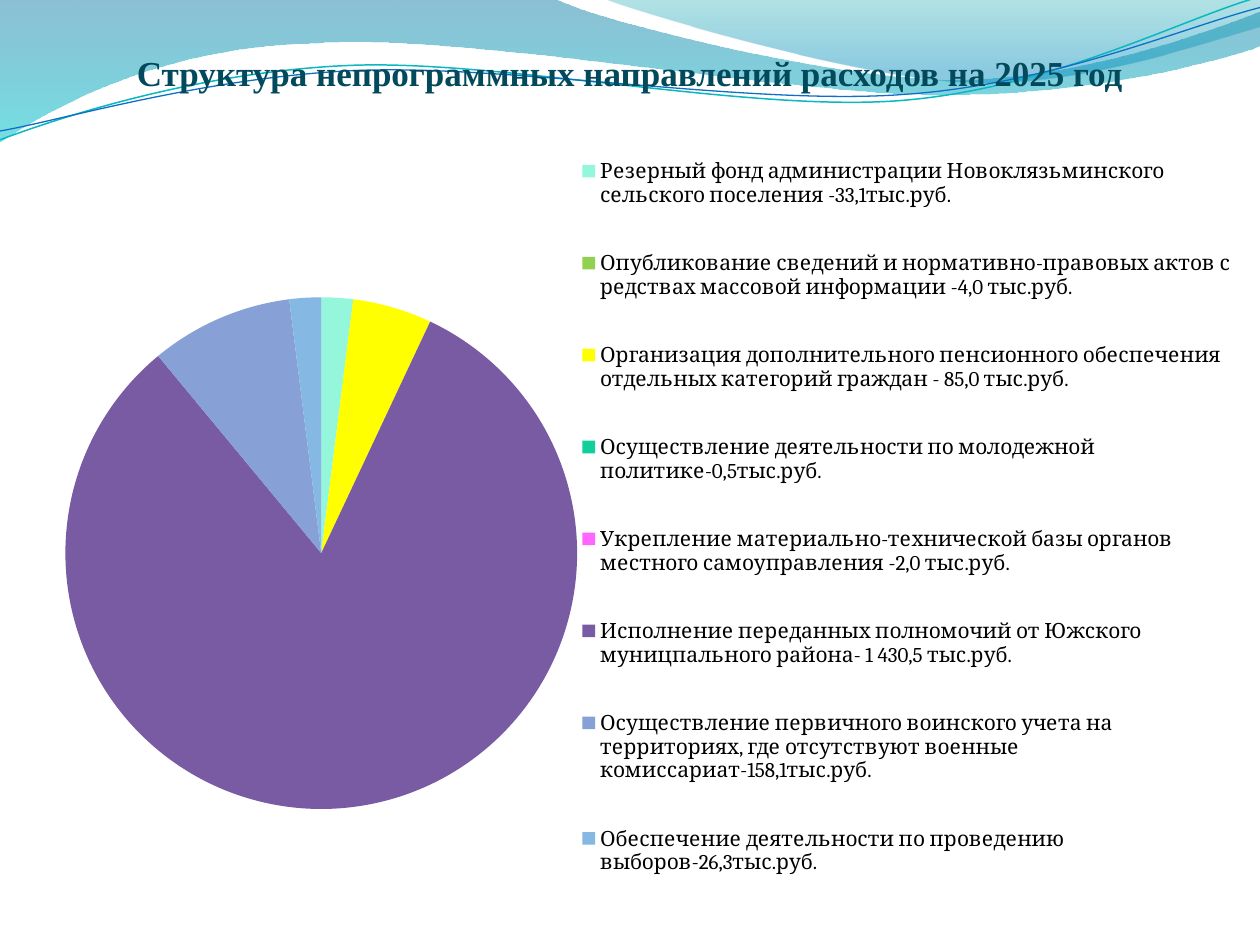
from lxml import etree
from pptx import Presentation
from pptx.chart.data import CategoryChartData
from pptx.dml.color import RGBColor
from pptx.enum.chart import XL_CHART_TYPE, XL_LEGEND_POSITION
from pptx.enum.text import PP_ALIGN
from pptx.oxml import parse_xml
from pptx.oxml.ns import nsdecls, qn
from pptx.util import Inches, Pt

PIE = XL_CHART_TYPE.PIE
LEGEND_RIGHT = XL_LEGEND_POSITION.RIGHT
CENTER = PP_ALIGN.CENTER

BLACK = RGBColor(0x00, 0x00, 0x00)
TITLE_TEAL = RGBColor(0x03, 0x49, 0x5C)

# Each wave: start point, then line ends (2 numbers) or Bezier curves (6 numbers).
# Gradient stops: position, colour, opacity in percent.
BANDS = [
    ([(0, 0), (4.4, -0.01), (4.76, 0.17, 6.64, 0.63, 7.58, 0.63),
      (8.53, 0.63, 9.58, 0.26, 10, 0.09), (10.01, 0.36),
      (9.83, 0.44, 8.7, 0.76, 7.46, 0.75), (6.22, 0.75, 3.82, 0.28, 2.57, 0.34),
      (1.29, 0.36, 0.46, 0.83, -0.01, 1.13), (0, 0)],
     [(0, RGBColor(0x00, 0x74, 0xA1), 45), (1, RGBColor(0x00, 0xC6, 0xCF), 55)]),
    ([(4.79, -0.01), (5.09, 0.11, 6.82, 0.62, 7.69, 0.65),
      (8.56, 0.69, 9.61, 0.32, 10, 0.21), (10, 0), (4.79, -0.01)],
     [(0, RGBColor(0x00, 0xA1, 0xA9), 30), (0.8, RGBColor(0x00, 0x8B, 0xBF), 45)]),
]
STRANDS = [
    ([(0, 1.11), (0.48, 0.93, 1.58, 0.57, 2.77, 0.52),
      (3.95, 0.47, 5.93, 0.89, 7.13, 0.8), (8.33, 0.71, 9.38, 0.15, 9.98, -0.02)],
     RGBColor(0x0A, 0xB8, 0xBF), 0.85),
    ([(0, 1.04), (0.47, 0.96, 1.64, 0.61, 2.83, 0.56),
      (4.03, 0.51, 5.97, 0.84, 7.17, 0.75), (8.36, 0.67, 9.41, 0.21, 10, 0.06)],
     RGBColor(0x0F, 0x6F, 0xC6), 0.75),
]

# Category, share of spending in percent, slice colour
EXPENSES = [
    ("Резерный фонд администрации Новоклязьминского сельского поселения -33,1тыс.руб.",
     2, RGBColor(0x94, 0xF7, 0xDC)),
    ("Опубликование сведений и нормативно-правовых актов с редствах массовой информации -4,0 тыс.руб.",
     0, RGBColor(0x92, 0xD0, 0x50)),
    ("Организация дополнительного пенсионного обеспечения отдельных категорий граждан - 85,0 тыс.руб.",
     5, RGBColor(0xFF, 0xFF, 0x00)),
    ("Осуществление деятельности по молодежной политике-0,5тыс.руб.",
     0, RGBColor(0x10, 0xCF, 0x9B)),
    ("Укрепление материально-технической базы органов местного самоуправления -2,0 тыс.руб.",
     0, RGBColor(0xFF, 0x66, 0xFF)),
    ("Исполнение переданных полномочий от Южского муницпального района- 1 430,5 тыс.руб.",
     82, RGBColor(0x78, 0x5B, 0xA3)),
    ("Осуществление первичного воинского учета на территориях, где отсутствуют военные комиссариат-158,1тыс.руб.",
     9, RGBColor(0x87, 0xA0, 0xD6)),
    ("Обеспечение деятельности по проведению выборов-26,3тыс.руб.",
     2, RGBColor(0x85, 0xB8, 0xE2)),
]


def add_wave(shapes, segments, close):
    """Draw a wave in inches, turning each run of three curve points into a Bezier."""
    points = [(Inches(x), Inches(y)) for segment in segments
              for x, y in zip(segment[::2], segment[1::2])]
    builder = shapes.build_freeform(*points[0])
    builder.add_line_segments(points[1:], close=close)
    wave = builder.convert_to_shape()
    wave.shadow.inherit = False
    lines = iter(list(wave._element.spPr.iter(qn("a:lnTo"))))
    for segment in segments[1:]:
        first = next(lines)
        if len(segment) == 6:
            curve = etree.Element(qn("a:cubicBezTo"))
            first.addprevious(curve)
            for line in (first, next(lines), next(lines)):
                curve.append(line[0])
                line.getparent().remove(line)
    return wave


def manual_layout(x, y, width, height, inner=False):
    """Return a chart layout element from percentages of the chart area."""
    target = '<c:layoutTarget val="inner"/>' if inner else ""
    return parse_xml(
        f'<c:layout {nsdecls("c")}><c:manualLayout>{target}'
        '<c:xMode val="edge"/><c:yMode val="edge"/>'
        f'<c:x val="{x / 100}"/><c:y val="{y / 100}"/>'
        f'<c:w val="{width / 100}"/><c:h val="{height / 100}"/>'
        '</c:manualLayout></c:layout>')


prs = Presentation()
prs.slide_width = Inches(10)
prs.slide_height = Inches(7.5)
slide = prs.slides.add_slide(prs.slide_layouts[6])

for segments, stops in BANDS:
    band = add_wave(slide.shapes, segments, close=True)
    band.line.fill.background()
    band.fill.gradient()
    band.fill.gradient_angle = 270
    for stop, (position, color, _) in zip(band.fill.gradient_stops, stops):
        stop.position = position
        stop.color.rgb = color
    gradient_colors = list(band._element.spPr.iter(qn("a:srgbClr")))
    for color_element, (_, _, opacity) in zip(gradient_colors, stops):
        etree.SubElement(color_element, qn("a:alpha")).set("val", str(opacity * 1000))

for segments, color, width in STRANDS:
    strand = add_wave(slide.shapes, segments, close=False)
    strand.fill.background()
    strand.line.color.rgb = color
    strand.line.width = Pt(width)

title = slide.shapes.add_textbox(Inches(0.5), Inches(0.36), Inches(9), Inches(1.18))
title_frame = title.text_frame
title_frame.word_wrap = True
title_frame.margin_left = title_frame.margin_right = title_frame.margin_bottom = 0
title_frame.margin_top = Inches(0.05)
title_frame.text = "Структура непрограммных направлений расходов на 2025 год"
heading = title_frame.paragraphs[0]
heading.alignment = CENTER
heading_font = heading.runs[0].font
heading_font.name = "Times New Roman"
heading_font.size = Pt(20)
heading_font.bold = True
heading_font.color.rgb = TITLE_TEAL

spending = CategoryChartData()
spending.categories = [category for category, _, _ in EXPENSES]
spending.add_series("Series 1", [share for _, share, _ in EXPENSES])
chart = slide.shapes.add_chart(
    PIE, Inches(0.5), Inches(0.92), Inches(9.38), Inches(6.58), spending).chart
chart.has_title = False
chart.font.name = "Cambria"
chart.font.size = Pt(18)
chart.font.color.rgb = BLACK

pie = chart.plots[0]
pie.vary_by_categories = True
for index, (_, _, color) in enumerate(EXPENSES):
    slice_format = pie.series[0].points[index].format
    slice_format.fill.solid()
    slice_format.fill.fore_color.rgb = color
    slice_format.line.fill.background()

chart.has_legend = True
legend = chart.legend
legend.position = LEGEND_RIGHT
legend.include_in_layout = False
legend.font.name = "Cambria"
legend.font.size = Pt(12)
legend.font.color.rgb = BLACK

plot_area = chart._chartSpace.chart.plotArea
for old_layout in plot_area.findall(qn("c:layout")):
    plot_area.remove(old_layout)
plot_area.insert(0, manual_layout(0.2, 12.2, 43.3, 81.1, inner=True))
legend_element = legend._element
for old_layout in legend_element.findall(qn("c:layout")):
    legend_element.remove(old_layout)
legend_element.find(qn("c:legendPos")).addnext(manual_layout(43.4, 0, 56, 97))

prs.save("out.pptx")
